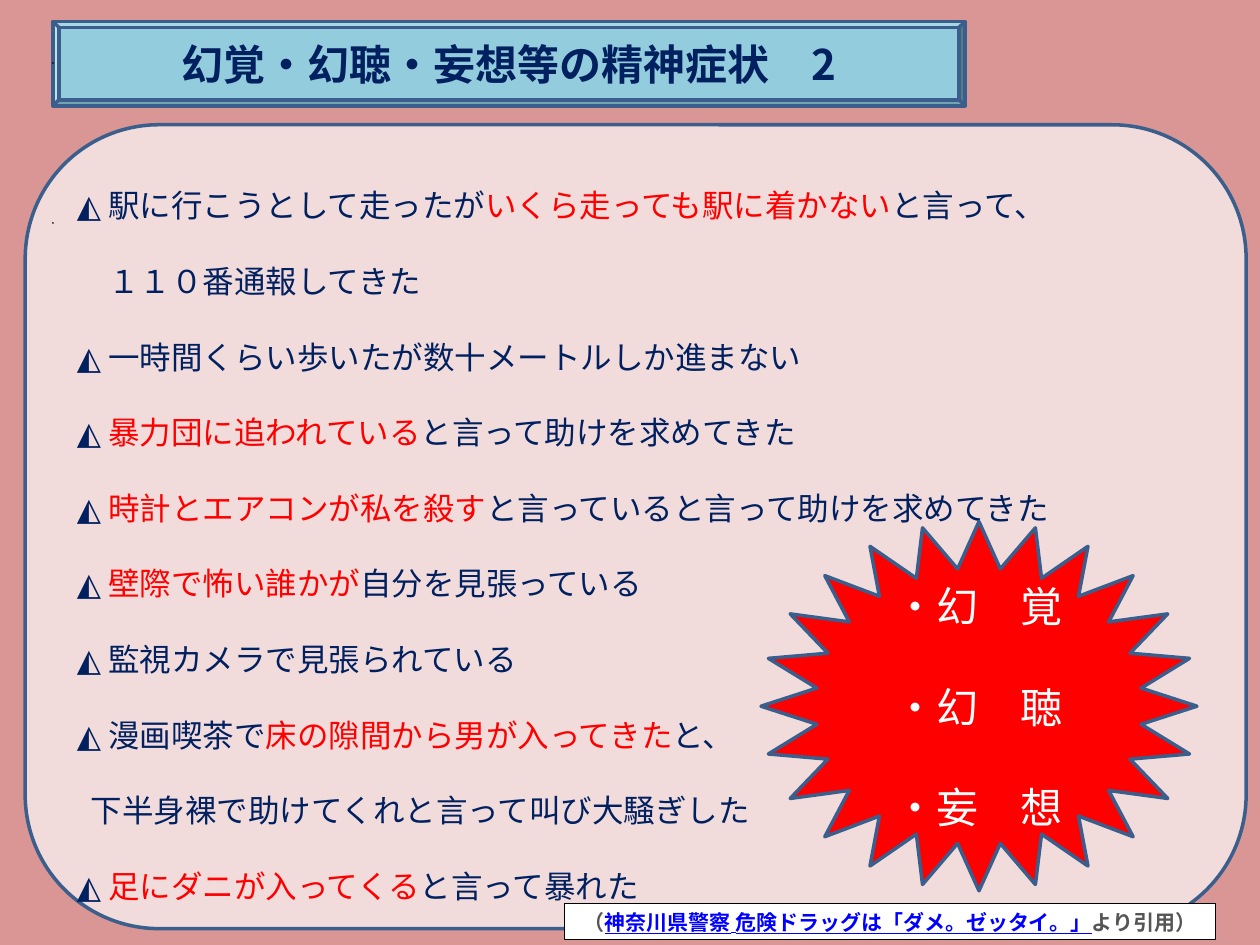
from lxml.etree import SubElement
from pptx import Presentation
from pptx.dml.color import RGBColor
from pptx.enum.shapes import MSO_SHAPE
from pptx.enum.text import MSO_ANCHOR, PP_ALIGN
from pptx.oxml.ns import qn
from pptx.util import Inches, Pt

ROSE = RGBColor(0xD9, 0x96, 0x94)
PALE_ROSE = RGBColor(0xF2, 0xDC, 0xDB)
SKY = RGBColor(0x93, 0xCD, 0xDD)
STEEL = RGBColor(0x3A, 0x5F, 0x8C)
BLUE = RGBColor(0x4F, 0x81, 0xBD)
NAVY = RGBColor(0x00, 0x20, 0x60)
RED = RGBColor(0xFF, 0x00, 0x00)
LINK_BLUE = RGBColor(0x00, 0x00, 0xFF)
GREY = RGBColor(0x55, 0x55, 0x55)
WHITE = RGBColor(0xFF, 0xFF, 0xFF)
BLACK = RGBColor(0x00, 0x00, 0x00)

JAPANESE = "Noto Sans CJK JP"
LATIN = "Roboto"
CONTINUATION_INDENT = Inches(0.11)

SYMPTOMS = [
    [("◭ 駅に行こうとして走ったが", NAVY), ("いくら走っても駅に着かない", RED), ("と言って、", NAVY)],
    [("　１１０番通報してきた", NAVY)],
    [("◭ 一時間くらい歩いたが数十メートルしか進まない", NAVY)],
    [("◭ ", NAVY), ("暴力団に追われている", RED), ("と言って助けを求めてきた", NAVY)],
    [("◭ ", NAVY), ("時計とエアコンが私を殺す", RED), ("と言っていると言って助けを求めてきた", NAVY)],
    [("◭ ", NAVY), ("壁際で怖い誰かが", RED), ("自分を見張っている", NAVY)],
    [("◭ 監視カメラで見張られている", NAVY)],
    [("◭ 漫画喫茶で", NAVY), ("床の隙間から男が入ってきた", RED), ("と、", NAVY)],
    [("下半身裸で助けてくれと言って叫び大騒ぎした", NAVY)],
    [("◭ ", NAVY), ("足にダニが入ってくる", RED), ("と言って暴れた", NAVY)],
]
INDENTED_LINE = 8

CITATION = [
    ("（", GREY, LATIN, False),
    ("神奈川県警察", LINK_BLUE, JAPANESE, True),
    (" ", LINK_BLUE, LATIN, True),
    ("危険ドラッグは「ダメ。ゼッタイ。」", LINK_BLUE, JAPANESE, True),
    ("より引用）", GREY, LATIN, False),
]


class SlideBuilder:
    def __init__(self, slide, background):
        self.slide = slide
        slide.background.fill.solid()
        slide.background.fill.fore_color.rgb = background

    def shape(self, kind, left, top, width, height, fill, line=STEEL, weight=2):
        shape = self.slide.shapes.add_shape(
            kind, Inches(left), Inches(top), Inches(width), Inches(height))
        shape.shadow.inherit = False
        shape.fill.solid()
        shape.fill.fore_color.rgb = fill
        shape.line.color.rgb = line
        shape.line.width = Pt(weight)
        shape.text_frame.word_wrap = True
        shape.text_frame.vertical_anchor = MSO_ANCHOR.MIDDLE
        return shape

    def text(self, shape, lines, size, bold=False, align=PP_ALIGN.CENTER,
             spacing=None, gap=0):
        text_frame = shape.text_frame
        text_frame.text = "\n".join("".join(part[0] for part in line) for line in lines)
        for index, (paragraph, line) in enumerate(zip(text_frame.paragraphs, lines)):
            paragraph.text = ""
            paragraph.alignment = align
            if spacing:
                paragraph.line_spacing = Pt(spacing)
            paragraph.space_before = Pt(gap if index else 0)
            for part in line:
                self.run(paragraph, size, bold, *part)
        return text_frame.paragraphs

    def run(self, paragraph, size, bold, text, color, font=JAPANESE, underline=False):
        run = paragraph.add_run()
        run.text = text
        run.font.size = Pt(size)
        run.font.bold = bold
        run.font.underline = underline
        run.font.color.rgb = color
        run.font.name = font
        SubElement(run.font._element, qn("a:ea")).set("typeface", font)


def main():
    presentation = Presentation()
    presentation.slide_width = Inches(10)
    presentation.slide_height = Inches(7.5)
    builder = SlideBuilder(
        presentation.slides.add_slide(presentation.slide_layouts[6]), ROSE)

    title = builder.shape(MSO_SHAPE.BEVEL, 0.42, 0.17, 7.24, 0.67, SKY)
    title.adjustments[0] = 0.07
    builder.text(title, [[("幻覚・幻聴・妄想等の精神症状　2", NAVY)]], 24, bold=True)

    panel = builder.shape(MSO_SHAPE.ROUNDED_RECTANGLE, 0.2, 0.99, 9.69, 6.38, PALE_ROSE)
    paragraphs = builder.text(panel, SYMPTOMS, 18, align=PP_ALIGN.LEFT, spacing=43.2)
    paragraphs[INDENTED_LINE]._p.get_or_add_pPr().set("marL", str(CONTINUATION_INDENT))

    for top in (0.5, 1.77):
        builder.shape(MSO_SHAPE.RECTANGLE, 0.42, top, 0, 0, BLUE, BLACK, 0.75)

    star = builder.shape(MSO_SHAPE.STAR_24_POINT, 6.04, 4.14, 3.46, 2.93, RED)
    words = ("・幻　覚", "・幻　聴", "・妄　想")
    builder.text(star, [[(word, WHITE)] for word in words], 24, spacing=28.8, gap=28.8)

    source = builder.shape(MSO_SHAPE.RECTANGLE, 4.48, 7.17, 5.17, 0.29, WHITE, BLACK, 0.5)
    builder.text(source, [CITATION], 12, bold=True)

    presentation.save("out.pptx")


if __name__ == "__main__":
    main()
